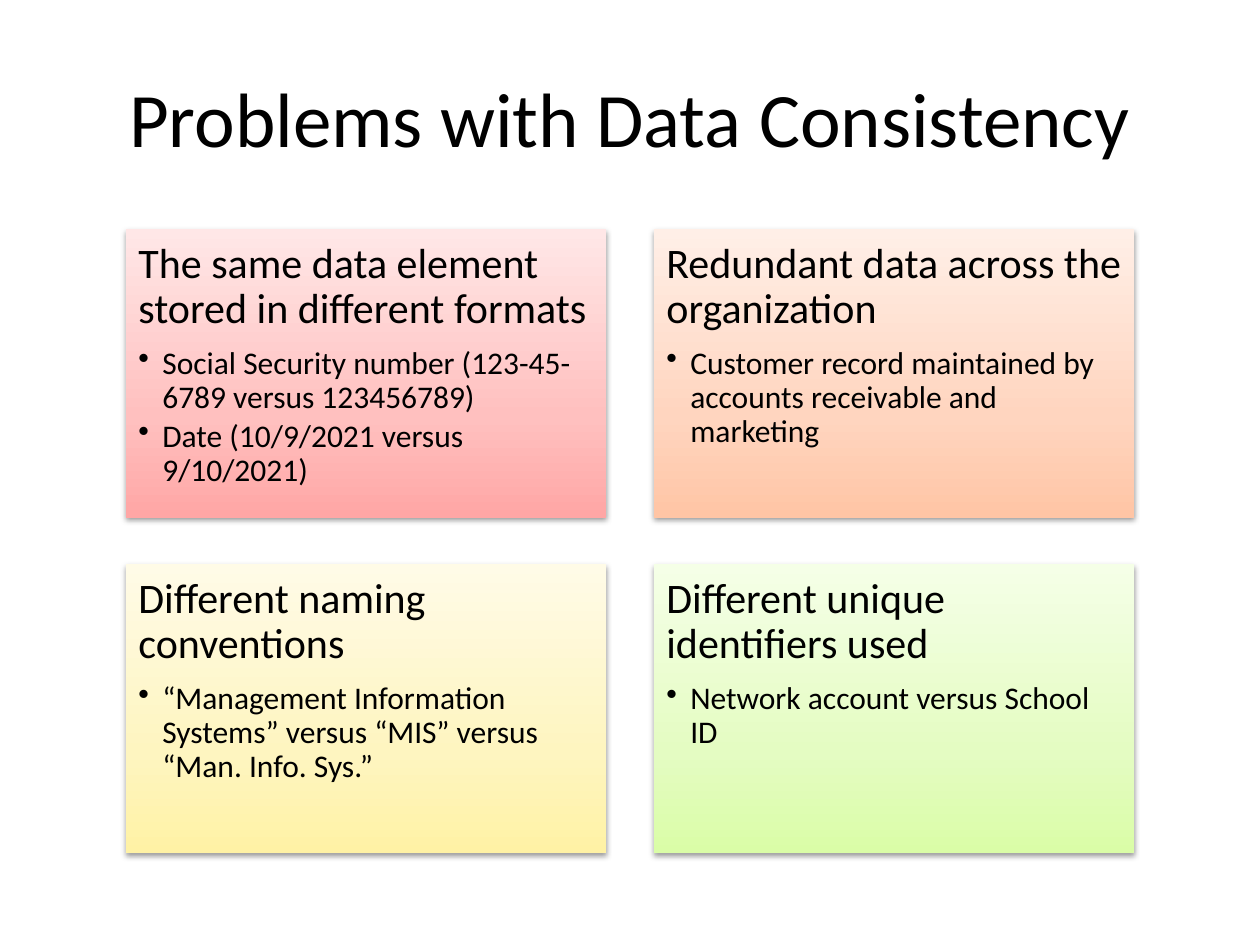
from copy import deepcopy

from lxml import etree
from pptx import Presentation
from pptx import util as u
from pptx.dml.color import RGBColor
from pptx.enum import shapes, text
from pptx.oxml import ns

FONT = "Calibri"
BLACK = RGBColor(0x00, 0x00, 0x00)
RED = [RGBColor(0xFF, 0xA6, 0xA5), RGBColor(0xFF, 0xC0, 0xBF), RGBColor(0xFF, 0xE7, 0xE7)]
ORANGE = [RGBColor(0xFF, 0xC5, 0xA5), RGBColor(0xFF, 0xD5, 0xBF), RGBColor(0xFF, 0xEF, 0xE7)]
YELLOW = [RGBColor(0xFF, 0xF2, 0xA5), RGBColor(0xFE, 0xF5, 0xC0), RGBColor(0xFF, 0xFB, 0xE7)]
GREEN = [RGBColor(0xDA, 0xFD, 0xA7), RGBColor(0xE4, 0xFC, 0xC2), RGBColor(0xF5, 0xFF, 0xE7)]
STOPS = [0, 0.35, 1]

GRID_LEFT, GRID_TOP = 1, 1.82
CARD_WIDTH, CARD_HEIGHT = 3.81, 2.29
COLUMN_STEP, ROW_STEP = 4.19, 2.66
COLUMNS = 2

CARDS = [
    (RED, "The same data element stored in different formats",
     ["Social Security number (123-45-6789 versus 123456789)",
      "Date (10/9/2021 versus 9/10/2021)"]),
    (ORANGE, "Redundant data across the organization",
     ["Customer record maintained by accounts receivable and marketing"]),
    (YELLOW, "Different naming conventions",
     ["“Management Information Systems” versus “MIS” versus “Man. Info. Sys.”"]),
    (GREEN, "Different unique identifiers used",
     ["Network account versus School ID"]),
]


def set_font(paragraph, size):
    paragraph.font.name = FONT
    paragraph.font.size = u.Pt(size)
    paragraph.font.color.rgb = BLACK


def add_title(slide, wording):
    box = slide.shapes.add_textbox(u.Inches(0.5), u.Inches(0.3), u.Inches(9), u.Inches(1.25))
    frame = box.text_frame
    frame.word_wrap = True
    frame.vertical_anchor = text.MSO_ANCHOR.MIDDLE
    paragraph = frame.paragraphs[0]
    paragraph.text = wording
    paragraph.alignment = text.PP_ALIGN.CENTER
    set_font(paragraph, 44)


def fill_gradient(shape, colors):
    shape.fill.gradient()
    shape.fill.gradient_angle = 90
    stop_list = shape.element.spPr.find(".//" + ns.qn("a:gsLst"))
    stop_list.append(deepcopy(stop_list[-1]))
    for stop, position, color in zip(shape.fill.gradient_stops, STOPS, colors):
        stop.position = position
        stop.color.rgb = color
        for adjustment in list(stop_list[STOPS.index(position)][0]):
            adjustment.getparent().remove(adjustment)


def add_shadow(shape):
    shape.shadow.inherit = False
    effects = shape.element.spPr.find(ns.qn("a:effectLst"))
    shadow = etree.SubElement(effects, ns.qn("a:outerShdw"), blurRad=str(u.Pt(3.1)),
                              dist=str(u.Pt(1.6)), dir="5400000", rotWithShape="0")
    color = etree.SubElement(shadow, ns.qn("a:srgbClr"), val=str(BLACK))
    etree.SubElement(color, ns.qn("a:alpha"), val="38000")


def add_bullet(paragraph):
    paragraph.level = 1
    properties = paragraph._p.get_or_add_pPr()
    properties.set("marL", str(u.Inches(0.19)))
    properties.set("indent", str(u.Inches(-0.19)))
    etree.SubElement(properties, ns.qn("a:buChar"), char="•")


def write_paragraph(paragraph, wording, size, space_after):
    paragraph.text = wording
    paragraph.alignment = text.PP_ALIGN.LEFT
    paragraph.line_spacing = 0.9
    paragraph.space_after = u.Pt(space_after)


def add_card(slide, column, row, colors, heading, bullets):
    card = slide.shapes.add_shape(
        shapes.MSO_SHAPE.RECTANGLE,
        u.Inches(GRID_LEFT + column * COLUMN_STEP), u.Inches(GRID_TOP + row * ROW_STEP),
        u.Inches(CARD_WIDTH), u.Inches(CARD_HEIGHT))
    fill_gradient(card, colors)
    card.line.fill.background()
    add_shadow(card)
    frame = card.text_frame
    frame.word_wrap = True
    frame.vertical_anchor = text.MSO_ANCHOR.TOP
    frame.margin_left = frame.margin_right = u.Inches(0.1)
    frame.margin_top = frame.margin_bottom = u.Inches(0.1)
    write_paragraph(frame.paragraphs[0], heading, 24, 8.4)
    set_font(frame.paragraphs[0], 24)
    for bullet in bullets:
        paragraph = frame.add_paragraph()
        write_paragraph(paragraph, bullet, 18, 2.7)
        add_bullet(paragraph)
        set_font(paragraph, 18)


def main():
    presentation = Presentation()
    presentation.slide_width = u.Inches(10)
    presentation.slide_height = u.Inches(7.5)
    slide = presentation.slides.add_slide(presentation.slide_layouts[6])
    add_title(slide, "Problems with Data Consistency")
    for index, card in enumerate(CARDS):
        row, column = divmod(index, COLUMNS)
        add_card(slide, column, row, *card)
    presentation.save("out.pptx")


if __name__ == "__main__":
    main()
